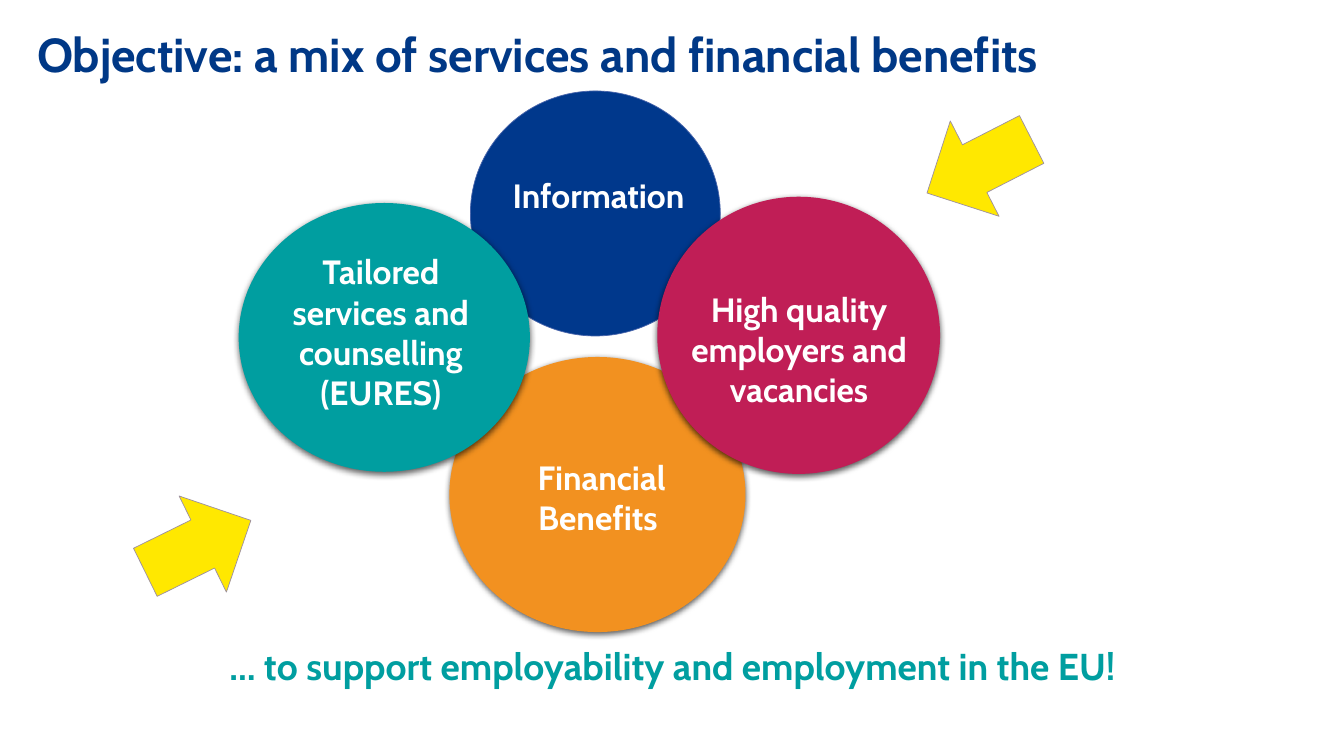
from pptx import Presentation
from pptx.dml.color import RGBColor
from pptx.enum.shapes import MSO_SHAPE
from pptx.enum.text import MSO_ANCHOR, PP_ALIGN
from pptx.oxml import parse_xml
from pptx.oxml.ns import nsdecls
from pptx.util import Pt

NAVY = RGBColor(0x00, 0x38, 0x86)
BLUE = RGBColor(0x00, 0x38, 0x8C)
SLATE = RGBColor(0x4A, 0x66, 0xAC)
ORANGE = RGBColor(0xF2, 0x91, 0x20)
TEAL = RGBColor(0x00, 0x9E, 0xA0)
CRIMSON = RGBColor(0xC0, 0x1E, 0x56)
YELLOW = RGBColor(0xFF, 0xE8, 0x00)
MAUVE = RGBColor(0x9D, 0x90, 0xA0)
WHITE = RGBColor(0xFF, 0xFF, 0xFF)

SHADOW = (
    f'<a:effectLst {nsdecls("a")}>'
    '<a:outerShdw blurRad="57150" dist="19050" dir="5400000" algn="ctr" rotWithShape="0">'
    '<a:srgbClr val="000000"><a:alpha val="63000"/></a:srgbClr>'
    '</a:outerShdw></a:effectLst>'
)


def add_text(slide, box, lines, size=24, color=WHITE, align=PP_ALIGN.CENTER,
             anchor=MSO_ANCHOR.TOP, inset_top=3.6):
    frame = slide.shapes.add_textbox(*map(Pt, box)).text_frame
    frame.word_wrap = True
    frame.vertical_anchor = anchor
    frame.margin_top = Pt(inset_top)
    frame.text = "\n".join(lines)
    for paragraph in frame.paragraphs:
        paragraph.alignment = align
        font = paragraph.runs[0].font
        font.name = "Cabin"
        font.size = Pt(size)
        font.bold = True
        font.color.rgb = color


def add_filled(slide, preset, box, fill, outline=None):
    shape = slide.shapes.add_shape(preset, *map(Pt, box))
    shape.shadow.inherit = False
    shape.fill.solid()
    shape.fill.fore_color.rgb = fill
    if outline is None:
        shape.line.fill.background()
    else:
        shape.line.color.rgb = outline
        shape.line.width = Pt(0.5)
    return shape


def add_circle(slide, box, fill, label, label_offset, outline=None, shadow=True, **label_format):
    circle = add_filled(slide, MSO_SHAPE.OVAL, box, fill, outline)
    if shadow:
        properties = circle._element.spPr
        properties.remove(properties.find(".//{*}effectLst"))
        properties.append(parse_xml(SHADOW))
    left, top = box[:2]
    dx, dy, width, height = label_offset
    add_text(slide, (left + dx, top + dy, width, height), label, **label_format)


def add_mix(slide, box):
    left, top = box
    add_circle(slide, (left + 165.5, top, 178.5, 175), BLUE, ["Information"],
               (-2, -11, 187, 142), outline=SLATE, shadow=False,
               anchor=MSO_ANCHOR.MIDDLE, inset_top=32.4)
    add_circle(slide, (left + 150.5, top + 190, 211.5, 196.5), ORANGE,
               ["Financial", "Benefits "], (9, 67.5, 199.5, 65.5))
    add_circle(slide, (left, top + 80, 208, 192), TEAL,
               ["Tailored services and counselling", "(EURES)"],
               (9.5, 21, 184, 142), anchor=MSO_ANCHOR.MIDDLE)
    add_circle(slide, (left + 299, top + 75.5, 202, 198), CRIMSON,
               ["High quality employers and vacancies"], (1.5, 62, 199.5, 94))


def add_arrow(slide, left, top, rotation):
    arrow = add_filled(slide, MSO_SHAPE.RIGHT_ARROW, (left, top, 84, 76.5), YELLOW, MAUVE)
    arrow.rotation = rotation


def main():
    deck = Presentation()
    deck.slide_width, deck.slide_height = Pt(960), Pt(540)
    slide = deck.slides.add_slide(deck.slide_layouts[6])
    add_text(slide, (19.5, 14.5, 845, 90),
             ["Objective: a mix of services and financial benefits"],
             size=34, color=NAVY, align=PP_ALIGN.LEFT)
    add_mix(slide, (170.5, 65))
    add_arrow(slide, 99.5, 352, 333.8)
    add_arrow(slide, 657.5, 80.5, 152.9)
    add_text(slide, (42, 456, 877.5, 39.5),
             ["… to support employability and employment in the EU!"],
             size=26.7, color=TEAL)
    deck.save("out.pptx")


if __name__ == "__main__":
    main()
